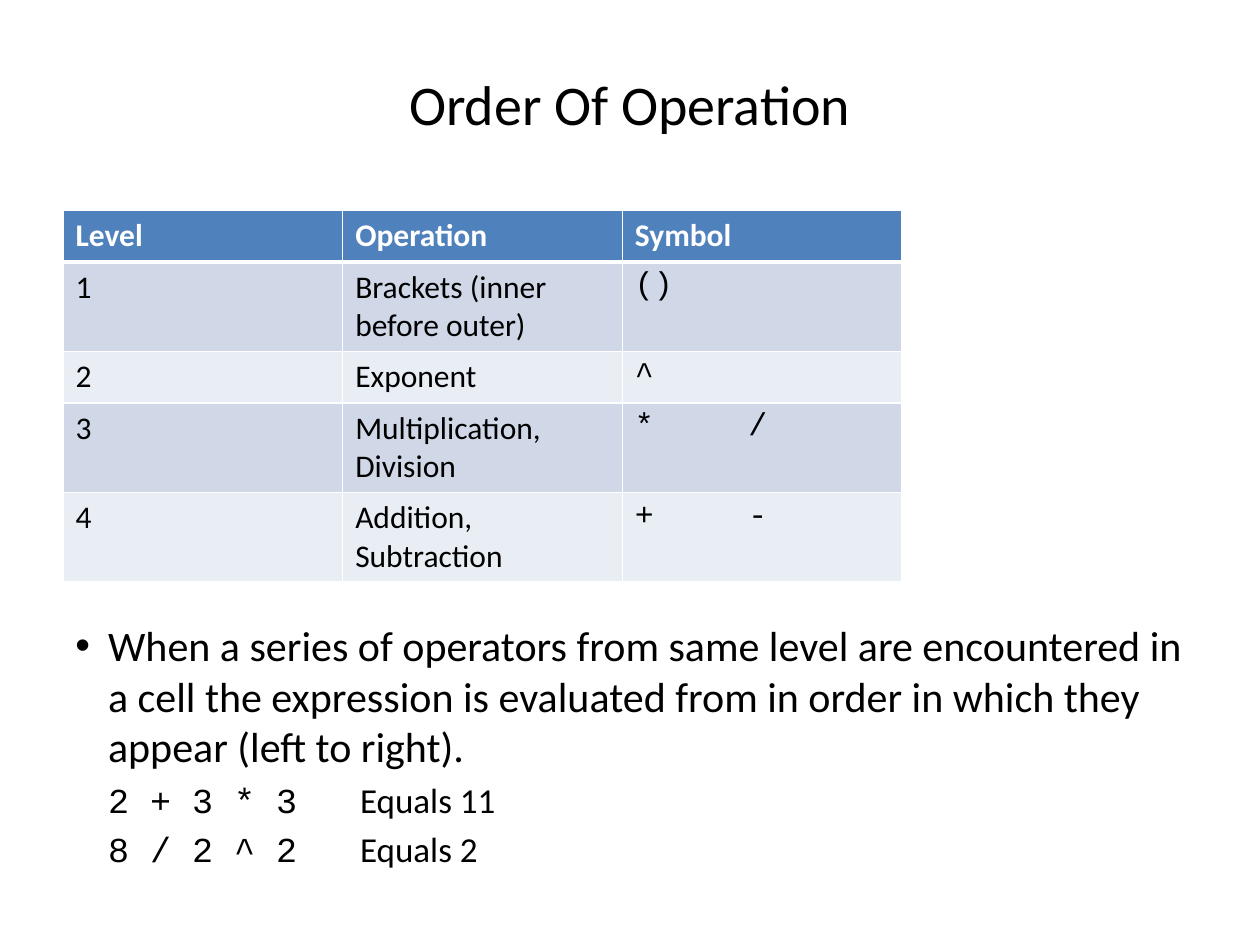
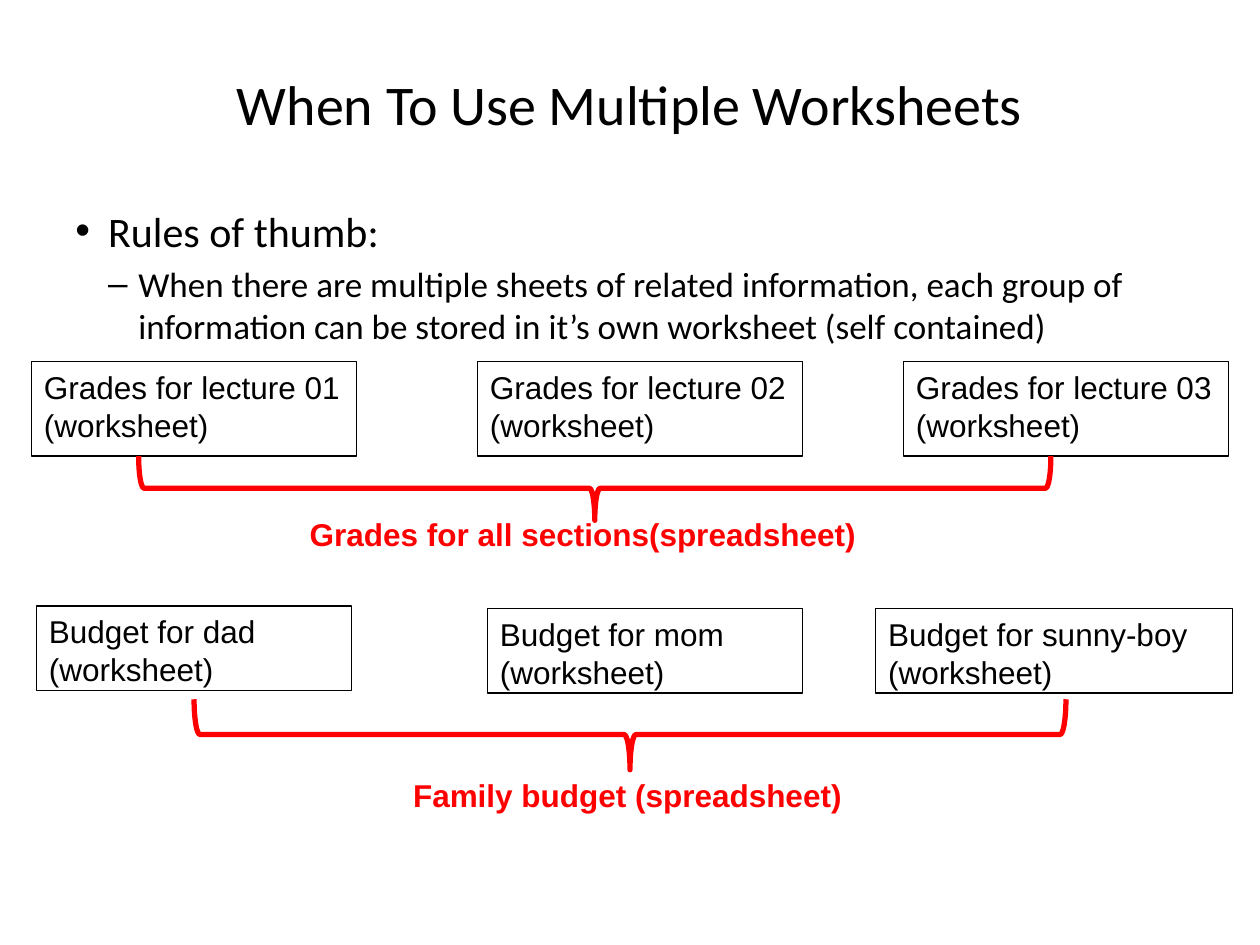
from lxml import etree
from pptx import Presentation
from pptx import util as u
from pptx.dml.color import RGBColor
from pptx.enum import shapes, text
from pptx.oxml import ns

BLACK = RGBColor(0x00, 0x00, 0x00)
WHITE = RGBColor(0xFF, 0xFF, 0xFF)
RED = RGBColor(0xFF, 0x00, 0x00)
HEADER_BLUE = RGBColor(0x4F, 0x81, 0xBD)
BANDS = (RGBColor(0xD0, 0xD8, 0xE8), RGBColor(0xE9, 0xED, 0xF4))

BODY, MONO, LABEL = "Calibri", "Courier New", "Arial"


class Slides:
    """Holds the deck, its style and the slide being built."""

    def __init__(self):
        self.deck = Presentation()
        self.deck.slide_width = u.Inches(10)
        self.deck.slide_height = u.Inches(7.5)
        self.page = None

    def new_page(self, title):
        self.page = self.deck.slides.add_slide(self.deck.slide_layouts[6])
        frame = self.text_frame(0.5, 0.3, 9, 1.03)
        frame.vertical_anchor = text.MSO_ANCHOR.MIDDLE
        para = frame.paragraphs[0]
        para.text = title
        para.alignment = text.PP_ALIGN.CENTER
        self.set_font(para, BODY, 32)

    def text_frame(self, left, top, width, height):
        box = self.page.shapes.add_textbox(*map(u.Inches, (left, top, width, height)))
        box.text_frame.word_wrap = True
        return box.text_frame

    def set_font(self, target, name, size, color=BLACK, bold=False):
        font = target.font
        font.name, font.size, font.bold = name, u.Pt(size), bold
        font.color.rgb = color

    def body(self, top, items):
        """Each item: spans of (wording, font), size, margin, hanging, bullet."""
        frame = self.text_frame(0.5, top, 9, 7.08 - top)
        for index, (spans, size, margin, hanging, bullet) in enumerate(items):
            para = frame.add_paragraph() if index else frame.paragraphs[0]
            props = para._p.get_or_add_pPr()
            props.set("marL", str(u.Inches(margin)))
            props.set("indent", str(-u.Inches(hanging)))
            if bullet:
                etree.SubElement(props, ns.qn("a:buFont"), typeface="Arial")
                etree.SubElement(props, ns.qn("a:buChar"), char=bullet)
            para.space_before = u.Pt(size * 0.2)
            self.set_font(para, BODY, size)
            for wording, font_name in spans:
                span = para.add_run()
                span.text = wording
                if len(spans) > 1:
                    span.font.name = font_name

    def table(self, left, top, column_width, row_heights, rows):
        width, height = column_width * len(rows[0]), sum(row_heights)
        grid = self.page.shapes.add_table(
            len(rows), len(rows[0]), *map(u.Inches, (left, top, width, height))).table
        for column in grid.columns:
            column.width = u.Inches(column_width)
        for r, (row, row_height) in enumerate(zip(rows, row_heights)):
            grid.rows[r].height = u.Inches(row_height)
            for c, wording in enumerate(row):
                cell = grid.cell(r, c)
                para = cell.text_frame.paragraphs[0]
                para.text = wording
                if "\t" in wording:
                    self.tab_stop(para, 0.9)
                header = r == 0
                self.set_font(para, MONO if c == 2 and not header else BODY, 18,
                              WHITE if header else BLACK, header)
                self.borders(cell, top=3 if r == 1 else 1, bottom=3 if header else 1)
                cell.fill.solid()
                cell.fill.fore_color.rgb = HEADER_BLUE if header else BANDS[(r - 1) % 2]

    def tab_stop(self, para, position):
        stops = etree.SubElement(para._p.get_or_add_pPr(), ns.qn("a:tabLst"))
        etree.SubElement(stops, ns.qn("a:tab"), pos=str(u.Inches(position)), algn="l")

    def borders(self, cell, top, bottom):
        props = cell._tc.get_or_add_tcPr()
        for side, points in (("L", 1), ("R", 1), ("T", top), ("B", bottom)):
            line = etree.SubElement(props, ns.qn(f"a:ln{side}"), w=str(u.Pt(points)))
            fill = etree.SubElement(line, ns.qn("a:solidFill"))
            etree.SubElement(fill, ns.qn("a:srgbClr"), val=str(WHITE))

    def outline(self, kind, left, top, width, height, color, points):
        shape = self.page.shapes.add_shape(
            kind, *map(u.Inches, (left, top, width, height)))
        shape.shadow.inherit = False
        shape.fill.background()
        shape.line.color.rgb = color
        shape.line.width = u.Pt(points)
        return shape

    def worksheet(self, left, top, width, height, lines):
        box = self.outline(shapes.MSO_SHAPE.RECTANGLE, left, top, width, height,
                           BLACK, 0.75)
        frame = box.text_frame
        frame.word_wrap = True
        frame.vertical_anchor = text.MSO_ANCHOR.TOP
        frame.text = lines
        for para in frame.paragraphs:
            para.alignment = text.PP_ALIGN.LEFT
            self.set_font(para, LABEL, 18)

    def brace(self, left, top, width, depth):
        """Brace pointing down; the area is given as seen after rotation."""
        middle_x, middle_y = left + width / 2, top + depth / 2
        brace = self.outline(shapes.MSO_SHAPE.RIGHT_BRACE, middle_x - depth / 2,
                             middle_y - width / 2, depth, width, RED, 3)
        brace.rotation = 90
        brace.adjustments[0] = 0.083
        brace.adjustments[1] = 0.5

    def spreadsheet(self, left, top, width, wording):
        frame = self.text_frame(left, top, width, 0.4)
        frame.auto_size = text.MSO_AUTO_SIZE.SHAPE_TO_FIT_TEXT
        para = frame.paragraphs[0]
        para.text = wording
        self.set_font(para, LABEL, 18, RED, bold=True)


def order_of_operation(slides):
    slides.new_page("Order Of Operation")
    slides.body(4.87, [
        ([("When a series of operators from same level are encountered in a cell "
           "the expression is evaluated from in order in which they appear "
           "(left to right).", BODY)], 24, 0.26, 0.26, "•"),
        ([("2 + 3 * 3\t", MONO), ("Equals 11", BODY)], 20, 0.26, 0, None),
        ([("8 / 2 ^ 2\t", MONO), ("Equals 2", BODY)], 20, 0.26, 0, None),
    ])
    slides.table(0.5, 1.67, 2.22, [0.41, 0.71, 0.41, 0.71, 0.71], [
        ("Level", "Operation", "Symbol"),
        ("1", "Brackets (inner before outer)", "()"),
        ("2", "Exponent", "^"),
        ("3", "Multiplication, Division", "*\t/"),
        ("4", "Addition, Subtraction", "+\t-"),
    ])


def multiple_worksheets(slides):
    slides.new_page("When To Use Multiple Worksheets")
    slides.body(1.58, [
        ([("Rules of thumb:", BODY)], 24, 0.26, 0.26, "•"),
        ([("When there are multiple sheets of related information, each group of "
           "information can be stored in it’s own worksheet (self contained)", BODY)],
         20, 0.5, 0.24, "–"),
    ])

    # Grades: one worksheet per lecture
    for number, left in enumerate((0.25, 3.79, 7.17), start=1):
        slides.worksheet(left, 2.87, 2.58, 0.75,
                         f"Grades for lecture {number:02}\n(worksheet)")
    slides.brace(1.1, 3.62, 7.24, 0.51)
    slides.spreadsheet(2.36, 4.04, 4.71, "Grades for all sections(spreadsheet)")

    # Budget: one worksheet per family member
    for left, top, width, lines in (
            (0.29, 4.81, 2.5, "Budget for dad (worksheet)"),
            (3.87, 4.83, 2.5, "Budget for mom\n(worksheet)"),
            (6.95, 4.83, 2.83, "Budget for sunny-boy\n(worksheet)")):
        slides.worksheet(left, top, width, 0.67, lines)
    slides.brace(1.54, 5.55, 6.92, 0.56)
    slides.spreadsheet(3.18, 6.11, 3.81, "Family budget (spreadsheet)")


def main():
    slides = Slides()
    order_of_operation(slides)
    multiple_worksheets(slides)
    slides.deck.save("out.pptx")


if __name__ == "__main__":
    main()
